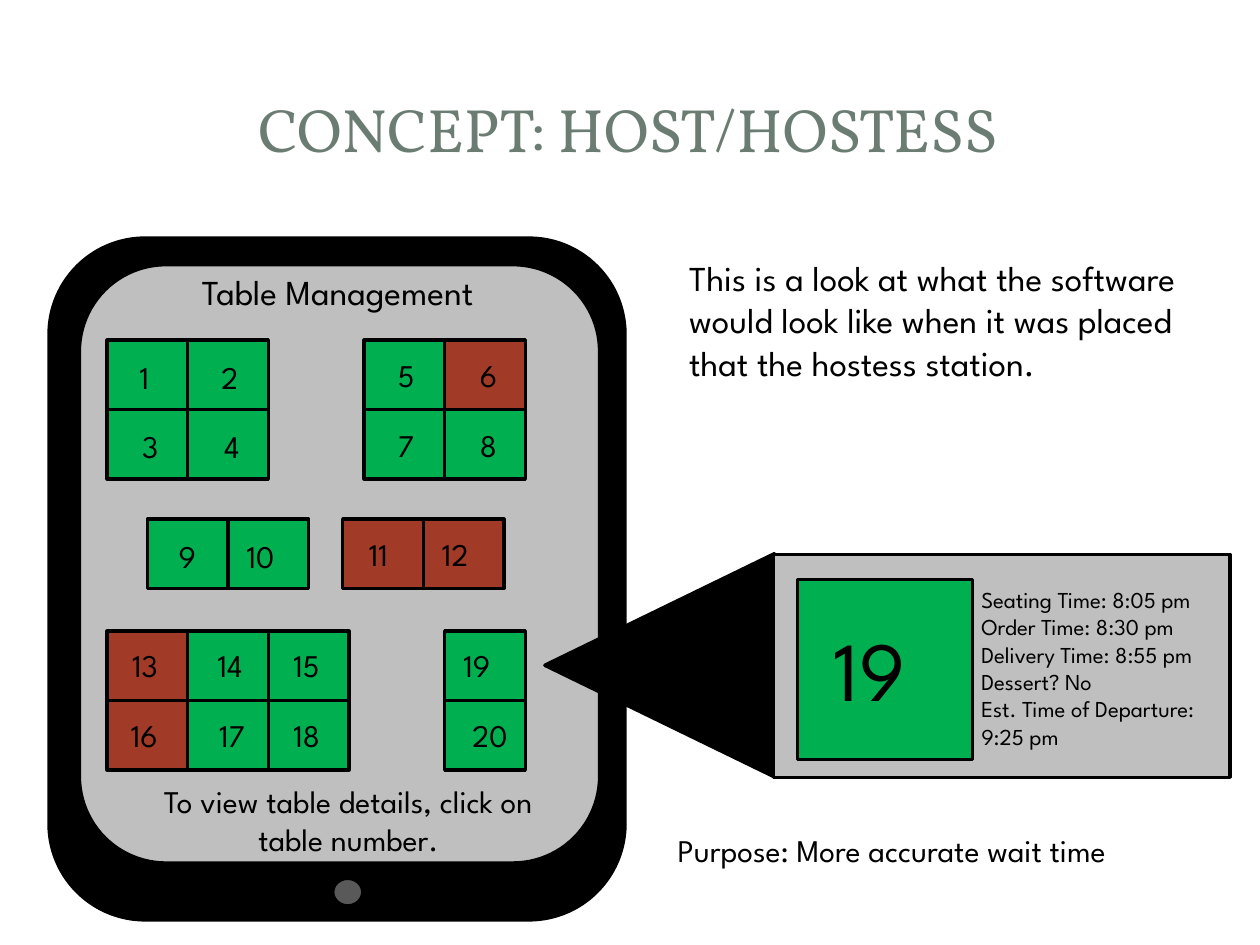
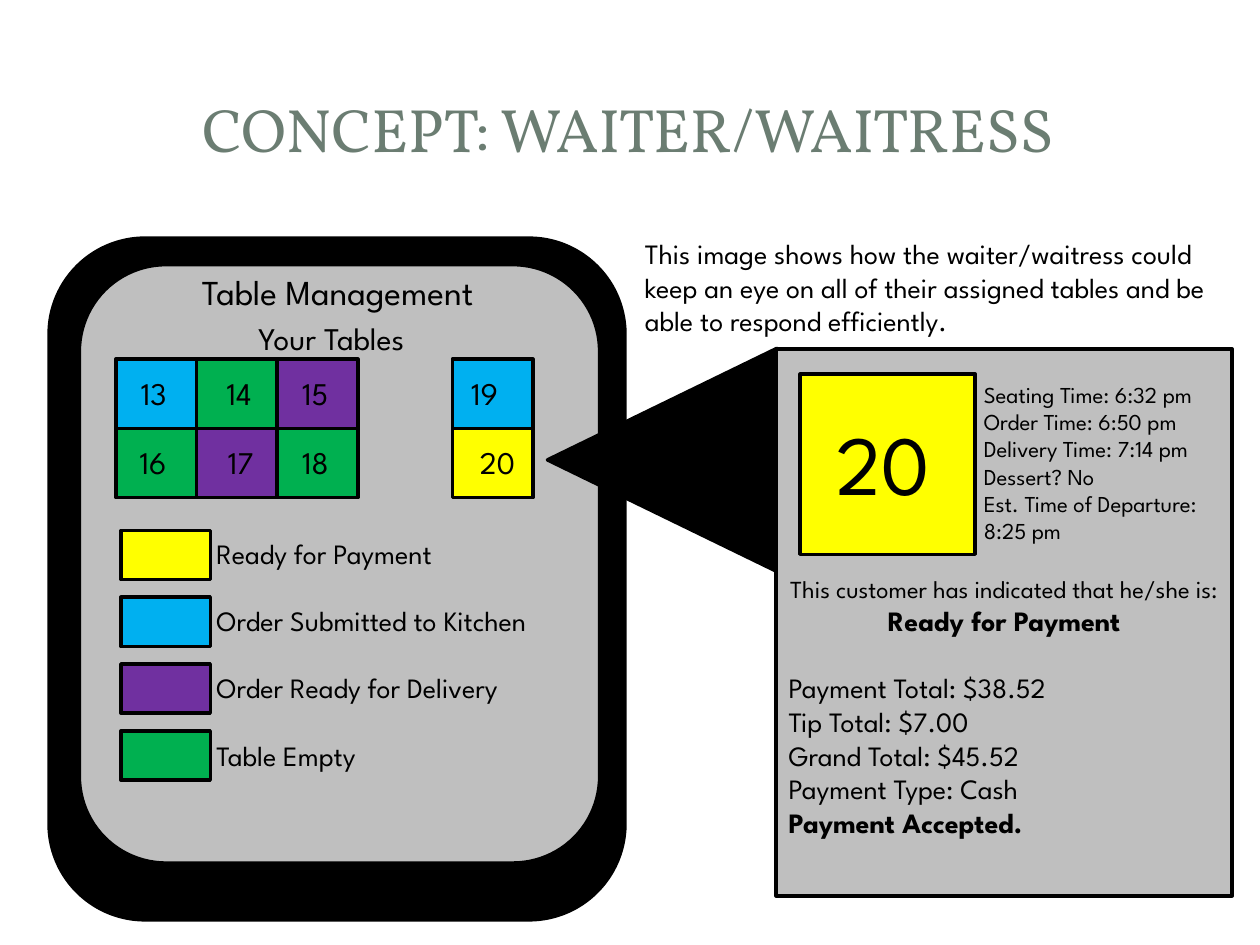
import pptx
import pptx.util
import pptx.dml.color
import pptx.enum.shapes
import pptx.enum.text
from dataclasses import dataclass

Inches = pptx.util.Inches
Shapes = pptx.enum.shapes.MSO_SHAPE
Align = pptx.enum.text.PP_ALIGN


@dataclass(frozen=True)
class Theme:
    ink: str = "000000"
    title_ink: str = "6B7D72"
    screen: str = "BFBFBF"
    button: str = "595959"
    green: str = "00B050"
    red: str = "A23A28"
    blue: str = "00B0F0"
    purple: str = "7030A0"
    yellow: str = "FFFF00"
    body_font: str = "League Spartan"
    title_font: str = "Vollkorn"
    title: int = 35
    large: int = 20
    label: int = 18
    body: int = 16
    note: int = 14
    detail: int = 13
    big_number: int = 48
    outline: int = 2


theme = Theme()
CELL_WIDTH, CELL_HEIGHT = 0.64, 0.55
PANEL_WIDTH, DETAILS_INDENT = 3.62, 1.55
BLANK_LINE = 19.2
NUMBER_SHIFT = {1: 0.16, 2: 0.17, 3: 0.18, 4: 0.19, 5: 0.17, 6: 0.18, 7: 0.17,
                8: 0.18, 9: 0.15, 10: 0.05, 11: 0.11, 12: 0.05, 13: 0.1, 14: 0.14,
                15: 0.1, 16: 0.09, 17: 0.15, 18: 0.1, 19: 0.05, 20: 0.12}

G, R, B, P, Y = theme.green, theme.red, theme.blue, theme.purple, theme.yellow

HOST = {
    "title": "CONCEPT: HOST/HOSTESS",
    "table_groups": [
        (0.85, 2.7, 0.09, 2, {1: G, 2: G, 3: G, 4: G}),
        (2.89, 2.7, 0.08, 2, {5: G, 6: R, 7: G, 8: G}),
        (1.17, 4.12, 0.09, 2, {9: G, 10: G}),
        (2.72, 4.12, 0.08, 2, {11: R, 12: R}),
        (0.85, 5.01, 0.07, 3, {13: R, 14: G, 15: G, 16: R, 17: G, 18: G}),
        (3.53, 5.01, 0.07, 1, {19: G, 20: G}),
    ],
    "callout": (6.14, 4.4, 1.77, 19, G),
    "details": ["Seating Time: 8:05 pm", "Order Time: 8:30 pm", "Delivery Time: 8:55 pm",
                "Dessert? No", "Est. Time of Departure: 9:25 pm"],
    "texts": [
        ((1.01, 6.16, 3.51, 0.71), ["To view table details, click on table number."],
         theme.label, Align.CENTER),
        ((5.37, 1.99, 4.11, 1.45),
         ["This is a look at what the software would look like when it was placed "
          "that the hostess station."], theme.large, Align.LEFT),
        ((5.28, 6.55, 4.39, 0.4), ["Purpose: More accurate wait time"],
         theme.label, Align.LEFT),
    ],
}

WAITER = {
    "title": "CONCEPT: WAITER/WAITRESS",
    "table_groups": [
        (0.92, 2.85, 0.07, 3, {13: B, 14: G, 15: P, 16: G, 17: P, 18: G}),
        (3.59, 2.85, 0.07, 1, {19: B, 20: Y}),
    ],
    "callout": (6.16, 2.77, 4.34, 20, Y),
    "details": ["Seating Time: 6:32 pm", "Order Time: 6:50 pm", "Delivery Time: 7:14 pm",
                "Dessert? No", "Est. Time of Departure: 8:25 pm"],
    "texts": [
        ((1.55, 2.48, 2.16, 0.4), ["Your Tables"], theme.label, Align.CENTER),
        ((5.02, 1.83, 4.76, 0.91),
         ["This image shows how the waiter/waitress could keep an eye on all of their "
          "assigned tables and be able to respond efficiently."], theme.body, Align.LEFT),
    ],
}

LEGEND = {"Ready for Payment": Y, "Order Submitted to Kitchen": B,
          "Order Ready for Delivery": P, "Table Empty": G}

BILL = [
    ("This customer has indicated that he/she is:", theme.note, False, Align.CENTER, 0),
    ("Ready for Payment", theme.body, True, Align.CENTER, BLANK_LINE),
    ("Payment Total: $38.52", theme.body, False, Align.LEFT, 0),
    ("Tip Total: $7.00", theme.body, False, Align.LEFT, 0),
    ("Grand Total: $45.52", theme.body, False, Align.LEFT, 0),
    ("Payment Type: Cash", theme.body, False, Align.LEFT, 0),
    ("Payment Accepted.", theme.body, True, Align.LEFT, 0),
]


def rgb(value):
    return pptx.dml.color.RGBColor.from_string(value)


def apply(target, values):
    for name, value in values.items():
        setattr(target, name, value)


def add_block(page, kind, place, fill):
    shape = page.shapes.add_shape(kind, *map(Inches, place))
    shape.shadow.inherit = False
    shape.fill.solid()
    shape.fill.fore_color.rgb = rgb(fill)
    shape.line.color.rgb = rgb(theme.ink)
    shape.line.width = pptx.util.Pt(theme.outline)
    return shape


def add_paragraphs(page, place, rows, font=theme.body_font, color=theme.ink,
                   anchor=pptx.enum.text.MSO_ANCHOR.TOP):
    box = page.shapes.add_textbox(*map(Inches, place))
    frame = box.text_frame
    apply(frame, {"word_wrap": True, "vertical_anchor": anchor})
    for index, (text, size, bold, align, after) in enumerate(rows):
        para = frame.paragraphs[0] if index == 0 else frame.add_paragraph()
        apply(para, {"alignment": align, "space_after": pptx.util.Pt(after)})
        span = para.add_run()
        span.text = text
        apply(span.font, {"name": font, "size": pptx.util.Pt(size), "bold": bold})
        span.font.color.rgb = rgb(color)


def add_text(page, place, lines, size, align=Align.LEFT, after=0, **look):
    rows = [(line, size, False, align, after) for line in lines]
    add_paragraphs(page, place, rows, **look)


def add_tablet(page):
    add_block(page, Shapes.ROUNDED_RECTANGLE, (0.39, 1.89, 4.57, 5.41), theme.ink)
    add_block(page, Shapes.ROUNDED_RECTANGLE, (0.63, 2.1, 4.13, 4.75), theme.screen)
    add_text(page, (1.02, 2.1, 3.32, 0.44), ["Table Management"], theme.large, Align.CENTER)


def add_table_group(page, left, top, label_drop, columns, tables):
    for index, (number, fill) in enumerate(tables.items()):
        row, column = divmod(index, columns)
        x, y = left + column * CELL_WIDTH, top + row * CELL_HEIGHT
        add_block(page, Shapes.RECTANGLE, (x, y, CELL_WIDTH, CELL_HEIGHT), fill)
        add_text(page, (x + NUMBER_SHIFT[number], y + label_drop, 0.6, 0.4),
                 [str(number)], theme.label)


def add_callout(page, left, top, height, number, fill, details):
    pointer = add_block(page, Shapes.ISOSCELES_TRIANGLE,
                        (left - 1.79, top - 0.03, 1.77, 1.82), theme.ink)
    pointer.rotation = 270
    add_block(page, Shapes.RECTANGLE, (left, top, PANEL_WIDTH, height), theme.screen)
    add_block(page, Shapes.RECTANGLE, (left + 0.19, top + 0.2, 1.39, 1.43), fill)
    add_text(page, (left + 0.38, top + 0.45, 1.05, 0.91), [str(number)], theme.big_number)
    add_text(page, (left + DETAILS_INDENT, top + 0.2, PANEL_WIDTH - DETAILS_INDENT, 1.5),
             details, theme.detail)


def add_legend(page):
    add_text(page, (1.62, 4.21, 3.1, 2.6), LEGEND, theme.body, after=BLANK_LINE)
    for index, fill in enumerate(LEGEND.values()):
        add_block(page, Shapes.RECTANGLE, (0.96, 4.21 + index * 0.53, 0.71, 0.39), fill)


def add_concept(deck, concept):
    page = deck.slides.add_slide(deck.slide_layouts[6])
    add_text(page, (0.47, 0.45, 9.03, 1.14), [concept["title"]], theme.title, Align.CENTER,
             font=theme.title_font, color=theme.title_ink,
             anchor=pptx.enum.text.MSO_ANCHOR.MIDDLE)
    add_tablet(page)
    for group in concept["table_groups"]:
        add_table_group(page, *group)
    add_callout(page, *concept["callout"], concept["details"])
    for text in concept["texts"]:
        add_text(page, *text)
    return page


def main():
    deck = pptx.Presentation()
    apply(deck, {"slide_width": Inches(10), "slide_height": Inches(7.5)})
    host = add_concept(deck, HOST)
    add_block(host, Shapes.OVAL, (2.64, 6.97, 0.24, 0.22), theme.button)
    waiter = add_concept(deck, WAITER)
    add_legend(waiter)
    add_paragraphs(waiter, (6.16, 4.51, PANEL_WIDTH, 2.46), BILL)
    deck.save("out.pptx")


if __name__ == "__main__":
    main()
